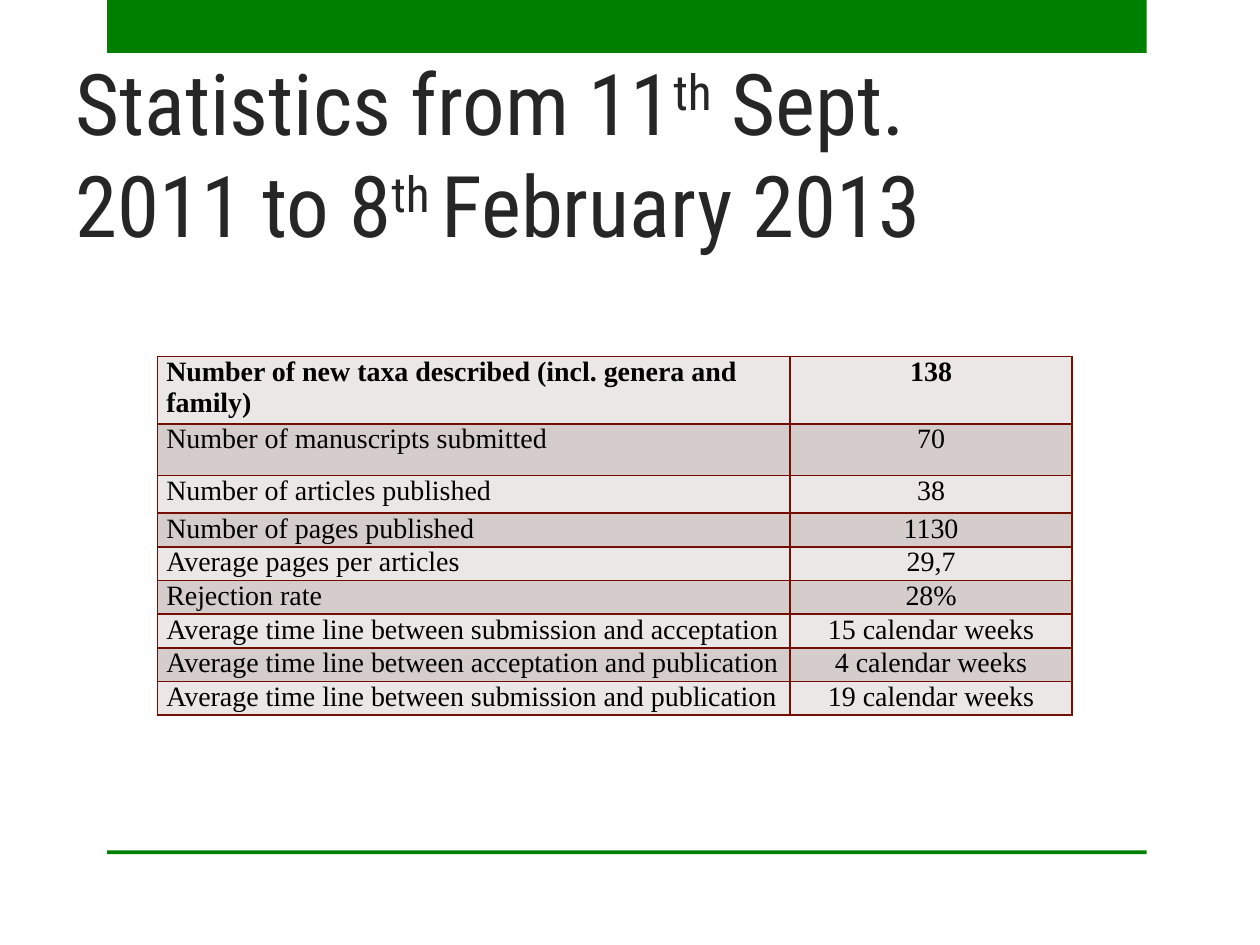
from lxml import etree
from pptx import Presentation, util as u
from pptx.dml.color import RGBColor
from pptx.enum import shapes, text
from pptx.oxml import ns

COLORS = {
    "green": "008000", "title": "262626", "text": "000000",
    "light": "EBE7E7", "dark": "D5CCCC", "border": "730E00",
}
TITLE_FONT = {"name": "Roboto Condensed", "size": u.Pt(48.6)}
CELL_FONT = {"name": "Times New Roman", "size": u.Pt(16)}
TITLE_RUNS = [
    ("Statistics from 11", False), ("th", True), (" Sept. 2011 to 8", False),
    ("th ", True), ("February 2013", False),
]
COLUMN_WIDTHS = [5.02, 2.24]
ROW_HEIGHTS = [0.41, 0.41, 0.3, 0.23, 0.25, 0.25, 0.23, 0.23, 0.22]
STATISTICS = [
    ("Number of new taxa described (incl. genera and family)", "138"),
    ("Number of manuscripts submitted", "70"),
    ("Number of articles published", "38"),
    ("Number of pages published", "1130"),
    ("Average pages per articles", "29,7"),
    ("Rejection rate", "28%"),
    ("Average time line between submission and acceptation", "15 calendar weeks"),
    ("Average time line between acceptation and publication", "4 calendar weeks"),
    ("Average time line between submission and publication", "19 calendar weeks"),
]


def color(name):
    """Return the named colour."""
    return RGBColor.from_string(COLORS[name])


def apply(target, values):
    """Set every attribute in values on target."""
    for name, value in values.items():
        setattr(target, name, value)


def add_bar(slide, top, height):
    """Add a green horizontal bar."""
    shape = slide.shapes.add_shape(
        shapes.MSO_SHAPE.RECTANGLE,
        u.Inches(0.85), u.Inches(top), u.Inches(8.25), u.Inches(height))
    shape.shadow.inherit = False
    shape.fill.solid()
    shape.fill.fore_color.rgb = color("green")
    shape.line.fill.background()


def add_title(slide):
    """Add the title with its superscript ordinals."""
    box = slide.shapes.add_textbox(
        u.Inches(0.5), u.Inches(0.65), u.Inches(8.25), u.Inches(1.42))
    apply(box.text_frame, {
        "word_wrap": True,
        "vertical_anchor": text.MSO_ANCHOR.BOTTOM,
        "margin_right": u.Inches(0.15),
    })
    paragraph = box.text_frame.paragraphs[0]
    for words, raised in TITLE_RUNS:
        run = paragraph.add_run()
        run.text = words
        apply(run.font, TITLE_FONT)
        run.font.color.rgb = color("title")
        if raised:
            run._r.get_or_add_rPr().set("baseline", "30000")


def add_borders(cell):
    """Draw a thin line on all four sides of a cell."""
    properties = cell._tc.get_or_add_tcPr()
    for index, side in enumerate(("lnL", "lnR", "lnT", "lnB")):
        line = etree.Element(ns.qn(f"a:{side}"), w=str(u.Pt(1)))
        fill = etree.SubElement(line, ns.qn("a:solidFill"))
        etree.SubElement(fill, ns.qn("a:srgbClr"), val=COLORS["border"])
        properties.insert(index, line)


def fill_cell(cell, words, shade, bold, alignment):
    """Write and format one table cell."""
    apply(cell, {
        "margin_left": u.Inches(0.07), "margin_right": u.Inches(0.07),
        "margin_top": 0, "margin_bottom": 0,
    })
    cell.fill.solid()
    cell.fill.fore_color.rgb = color(shade)
    add_borders(cell)
    paragraph = cell.text_frame.paragraphs[0]
    paragraph.alignment = alignment
    run = paragraph.add_run()
    run.text = words
    apply(run.font, {**CELL_FONT, "bold": bold})
    run.font.color.rgb = color("text")


def add_statistics(slide):
    """Add the statistics table with alternating row shades."""
    table = slide.shapes.add_table(
        len(STATISTICS), len(COLUMN_WIDTHS), u.Inches(1.25), u.Inches(2.83),
        u.Inches(sum(COLUMN_WIDTHS)), u.Inches(sum(ROW_HEIGHTS))).table
    for column, width in zip(table.columns, COLUMN_WIDTHS):
        column.width = u.Inches(width)
    alignments = (text.PP_ALIGN.LEFT, text.PP_ALIGN.CENTER)
    for index, (row, values) in enumerate(zip(table.rows, STATISTICS)):
        row.height = u.Inches(ROW_HEIGHTS[index])
        shade = "dark" if index % 2 else "light"
        for cell, words, alignment in zip(row.cells, values, alignments):
            fill_cell(cell, words, shade, index == 0, alignment)


def main():
    """Build the statistics slide."""
    presentation = Presentation()
    presentation.slide_width = u.Inches(10)
    presentation.slide_height = u.Inches(7.5)
    slide = presentation.slides.add_slide(presentation.slide_layouts[6])
    add_bar(slide, 0, 0.42)
    add_bar(slide, 6.75, 0.03)
    add_title(slide)
    add_statistics(slide)
    presentation.save("out.pptx")


if __name__ == "__main__":
    main()
